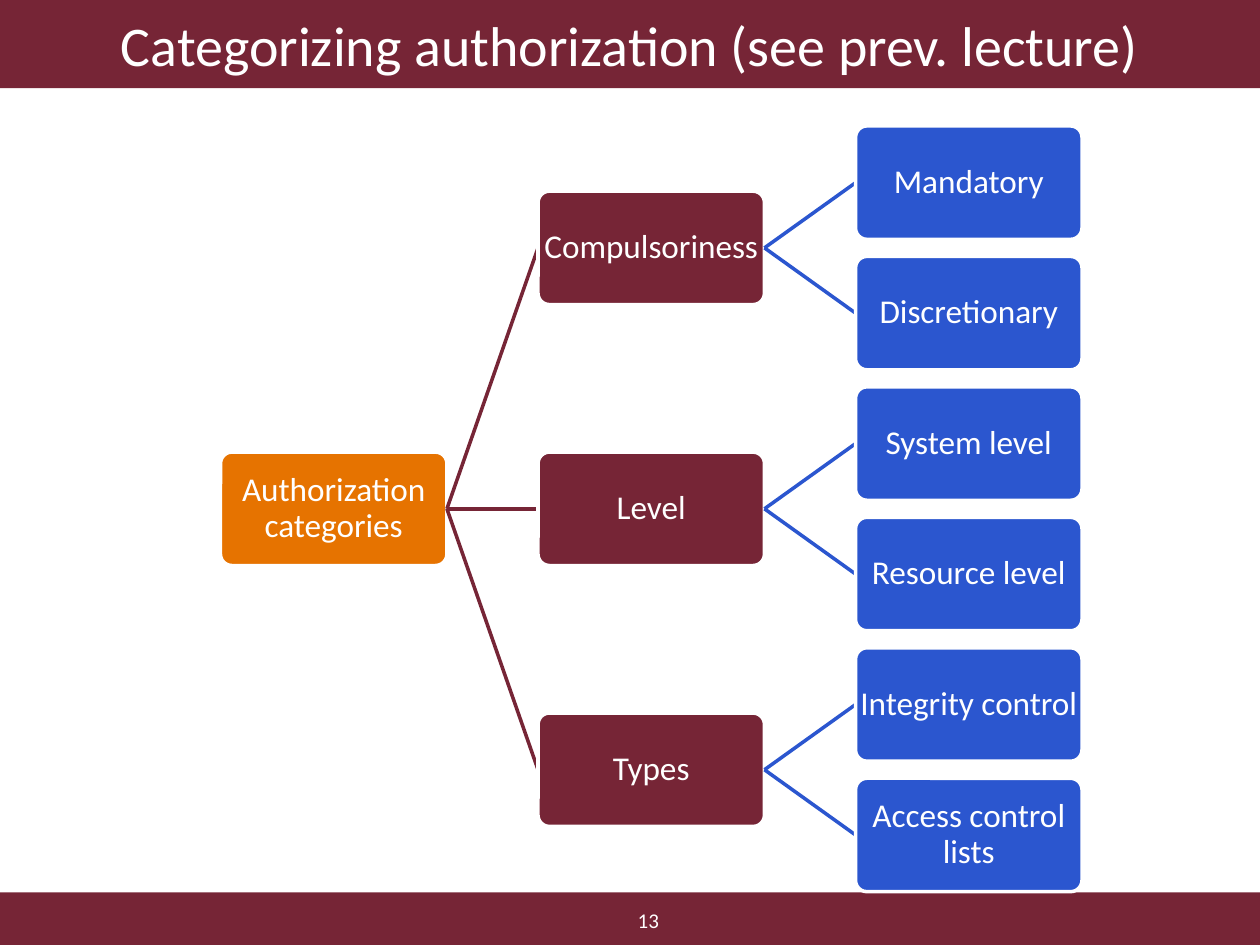
from pptx import Presentation
from pptx import util as u
from pptx.dml.color import RGBColor
from pptx.enum import shapes, text
from pptx.oxml.ns import qn
from lxml import etree

WINE, ORANGE, BLUE, WHITE = "762536", "E67300", "2B56CF", "FFFFFF"
FONT = "Calibri"

# Tree grid, in points
BOX_W, BOX_H = 129.4, 64.8
LEFT, TOP = 126, 72
COL_STEP, ROW_STEP = 181.45, 74.55

ROOT = "Authorization categories"
CATEGORIES = {
    "Compulsoriness": ["Mandatory", "Discretionary"],
    "Level": ["System level", "Resource level"],
    "Types": ["Integrity control", "Access control lists"],
}


def rgb(value):
    return RGBColor.from_string(value)


def set_text(sp, content, size=19, color=WHITE, spacing=None, inset=(7.2, 3.6)):
    tf = sp.text_frame
    tf.word_wrap = True
    tf.auto_size = text.MSO_AUTO_SIZE.NONE
    tf.vertical_anchor = text.MSO_ANCHOR.MIDDLE
    tf.margin_left = tf.margin_right = u.Pt(inset[0])
    tf.margin_top = tf.margin_bottom = u.Pt(inset[1])
    p = tf.paragraphs[0]
    p.alignment = text.PP_ALIGN.CENTER
    if spacing:
        p.line_spacing = spacing
    r = p.add_run()
    r.text = content
    r.font.name = FONT
    r.font.size = u.Pt(size)
    r.font.color.rgb = rgb(color)


class Deck:
    """Holds the presentation style and the current slide."""

    def __init__(self, width, height):
        self.prs = Presentation()
        self.prs.slide_width, self.prs.slide_height = u.Pt(width), u.Pt(height)
        self.s = self.prs.slides.add_slide(self.prs.slide_layouts[5])

    def title(self, content, x, y, w, h):
        sp = self.s.shapes.title
        sp.left, sp.top, sp.width, sp.height = map(u.Pt, (x, y, w, h))
        sp.fill.solid()
        sp.fill.fore_color.rgb = rgb(WINE)
        set_text(sp, content, size=32)

    def box(self, x, y, w, h, fill, kind=shapes.MSO_SHAPE.RECTANGLE, line=None):
        sp = self.s.shapes.add_shape(kind, *map(u.Pt, (x, y, w, h)))
        sp.shadow.inherit = False
        sp.fill.solid()
        sp.fill.fore_color.rgb = rgb(fill)
        if line:
            sp.line.color.rgb = rgb(line)
            sp.line.width = u.Pt(2)
        else:
            sp.line.fill.background()
        return sp

    def label(self, content, x, y, w, h, **fmt):
        set_text(self.s.shapes.add_textbox(*map(u.Pt, (x, y, w, h))), content, **fmt)

    def link(self, parent, color):
        cx = self.s.shapes.add_connector(shapes.MSO_CONNECTOR.STRAIGHT, 0, 0, 0, 0)
        cx.begin_connect(parent, 3)
        cx.line.color.rgb = rgb(color)
        cx.line.width = u.Pt(2)
        etree.SubElement(cx._element.spPr, qn("a:effectLst"))
        return cx

    def node(self, content, col, row, fill, parent=None):
        # The link goes behind the child, so its white outline leaves a gap
        cx = self.link(parent, fill) if parent is not None else None
        sp = self.box(LEFT + col * COL_STEP, TOP + row * ROW_STEP, BOX_W, BOX_H,
                      fill, shapes.MSO_SHAPE.ROUNDED_RECTANGLE, WHITE)
        sp.adjustments[0] = 0.1
        set_text(sp, content, spacing=0.9, inset=(0.6, 0.6))
        if cx is not None:
            cx.end_connect(sp, 1)
        return sp


def main():
    deck = Deck(720, 540)

    # Title band and footer
    deck.title("Categorizing authorization (see prev. lecture)", 0, 0, 720, 50.4)
    deck.box(0, 510, 720, 30, WINE)
    deck.label("13", 253.5, 512, 234, 28, size=12)

    # Category tree: each parent is centred on its children
    root = deck.node(ROOT, 0, 2.5, ORANGE)
    row = 0
    for name, leaves in CATEGORIES.items():
        branch = deck.node(name, 1, row + (len(leaves) - 1) / 2, WINE, root)
        for leaf in leaves:
            deck.node(leaf, 2, row, BLUE, branch)
            row += 1

    deck.prs.save("out.pptx")


if __name__ == "__main__":
    main()
